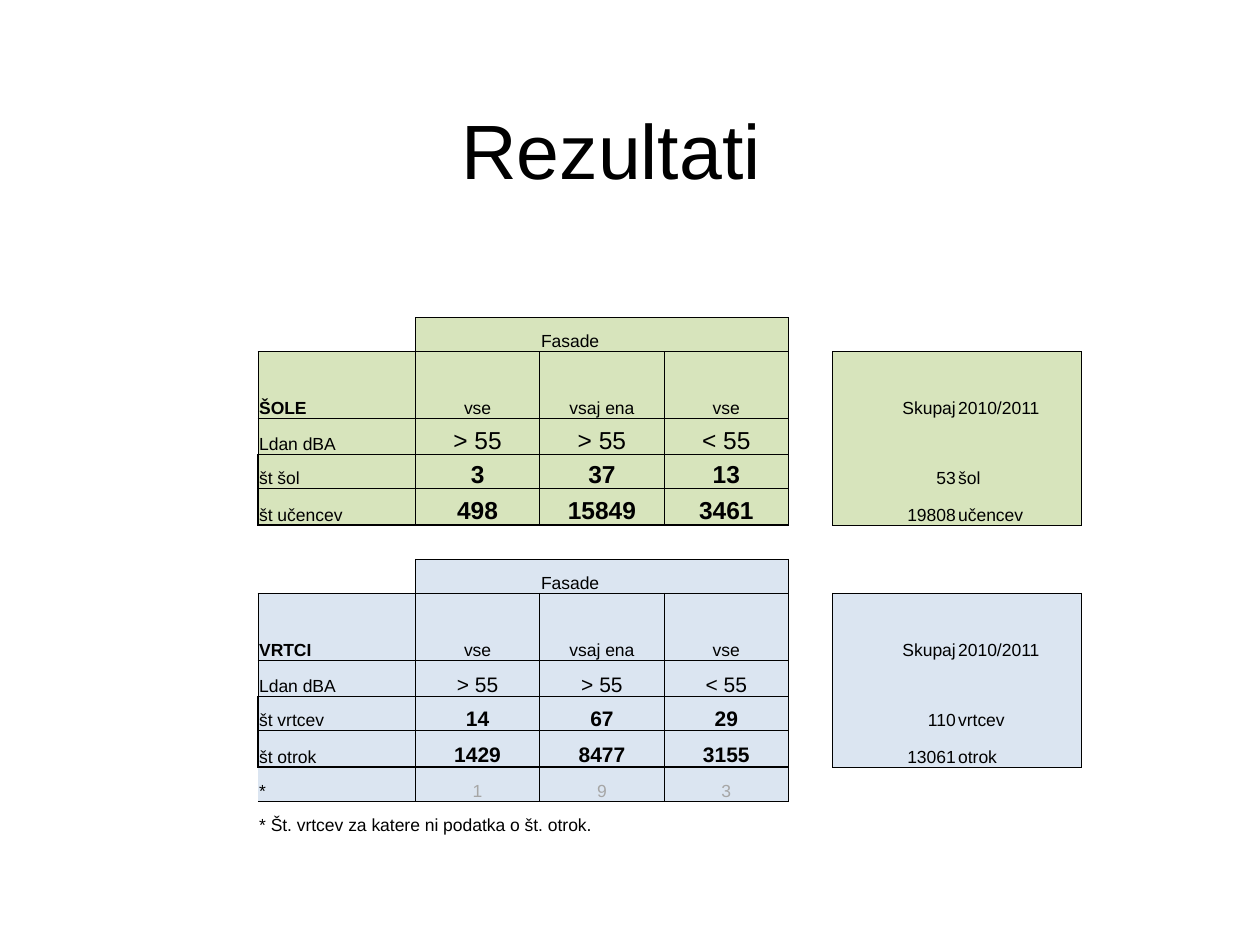
import pptx
import pptx.dml.color
import pptx.enum.text
import pptx.oxml.ns
import pptx.util
from lxml import etree

Inches = pptx.util.Inches
Pt = pptx.util.Pt
qn = pptx.oxml.ns.qn
ALIGN = pptx.enum.text.PP_ALIGN
ANCHOR = pptx.enum.text.MSO_ANCHOR

COLORS = {"text": "000000", "muted": "A6A6A6", "schools": "D7E4BC", "kindergartens": "DBE5F1"}
FONT = "Arial"
BASE_SIZE = 10
THIN, THICK = 0.5, 1
SIDES = ("lnL", "lnR", "lnT", "lnB")
LABEL, FIRST, LAST, TOTAL, UNIT = 1, 2, 4, 6, 7
HEADINGS = ("vse", "vsaj ena", "vse")
LEVELS = ("> 55", "> 55", "< 55")


def rgb(name):
    return pptx.dml.color.RGBColor.from_string(COLORS[name])


def write(paragraph, text, align=ALIGN.LEFT, size=BASE_SIZE, bold=False, color="text"):
    paragraph.alignment = align
    run = paragraph.add_run()
    run.text = text
    for name, value in {"name": FONT, "size": Pt(size), "bold": bold}.items():
        setattr(run.font, name, value)
    run.font.color.rgb = rgb(color)


def write_cell(table, row, column, text, **style):
    write(table.cell(row, column).text_frame.paragraphs[0], text, **style)


def write_values(table, row, label, values, **style):
    """Fill a label cell and the three centred cells beside it."""
    write_cell(table, row, LABEL, label)
    for column, value in enumerate(values, FIRST):
        write_cell(table, row, column, value, align=ALIGN.CENTER, **style)


def shade(table, rows, columns, color):
    for row in rows:
        for column in columns:
            fill = table.cell(row, column).fill
            fill.solid()
            fill.fore_color.rgb = rgb(color)


def outline(edges, top, left, bottom, right, width=THIN):
    """Record a frame around a cell range, on both sides of each shared edge."""
    for row in range(top, bottom + 1):
        edges[row, left, "lnL"] = edges[row, left - 1, "lnR"] = width
        edges[row, right, "lnR"] = edges[row, right + 1, "lnL"] = width
    for column in range(left, right + 1):
        edges[top, column, "lnT"] = edges[top - 1, column, "lnB"] = width
        edges[bottom, column, "lnB"] = edges[bottom + 1, column, "lnT"] = width


def outline_grid(edges, rows):
    for row in rows:
        for column in range(LABEL, LAST + 1):
            outline(edges, row, column, row, column)


def draw_borders(table, edges):
    for row in range(len(table.rows)):
        for column in range(len(table.columns)):
            properties = table.cell(row, column)._tc.get_or_add_tcPr()
            for position, side in enumerate(SIDES):
                width = edges.get((row, column, side))
                line = etree.Element(qn("a:" + side))
                if width:
                    line.set("w", str(Pt(width)))
                    solid = etree.SubElement(line, qn("a:solidFill"))
                    etree.SubElement(solid, qn("a:srgbClr"), val=COLORS["text"])
                else:
                    etree.SubElement(line, qn("a:noFill"))
                properties.insert(position, line)


def add_block(table, edges, top, name, counts, total_rows, size, color):
    """Place one group: facade header, level grid, framed counts and totals box."""
    heading, levels, first_count = top + 1, top + 2, top + 3
    bottom = top + 4
    shade(table, [top], range(FIRST, LAST + 1), color)
    shade(table, range(heading, bottom + 1), range(LABEL, LAST + 1), color)
    shade(table, range(heading, bottom + 1), (TOTAL, UNIT), color)

    write_cell(table, top, FIRST + 1, "Fasade")
    write_cell(table, heading, LABEL, name, bold=True)
    for column, text in enumerate(HEADINGS, FIRST):
        write_cell(table, heading, column, text, align=ALIGN.CENTER)
    write_values(table, levels, "Ldan dBA", LEVELS, size=size)
    for row, (label, *values) in enumerate(counts, first_count):
        write_values(table, row, label, values, size=size, bold=True)

    totals = {heading: ("Skupaj", "2010/2011"), **dict(enumerate(total_rows, first_count))}
    for row, (total, unit) in totals.items():
        write_cell(table, row, TOTAL, total, align=ALIGN.RIGHT)
        write_cell(table, row, UNIT, unit)

    outline(edges, top, FIRST, top, LAST)
    outline_grid(edges, range(heading, bottom + 1))
    outline(edges, first_count, LABEL, bottom, LAST, THICK)
    outline(edges, heading, TOTAL, bottom, UNIT)


def add_missing_data(table, edges, row):
    """Place the row of facilities without data and its footnote."""
    shade(table, [row], range(LABEL, LAST + 1), "kindergartens")
    write_values(table, row, "*", ("1", "9", "3"), color="muted")
    for column in range(LABEL, LAST + 1):
        for side in ("lnL", "lnR", "lnB"):
            edges[row, column, side] = THIN
        edges[row + 1, column, "lnT"] = THIN
    edges[row, LAST + 1, "lnL"] = THIN
    table.cell(row + 1, LABEL).merge(table.cell(row + 1, LAST))
    write_cell(table, row + 1, LABEL, "* Št. vrtcev za katere ni podatka o št. otrok.")


def add_empty_table(slide, left, top, width, height):
    label_width, gap_width = Inches(1.25), Inches(0.35)
    regular_width = (width - label_width - gap_width) // 7
    block_heights = [0.27, 0.53, 0.29, 0.27, 0.29]
    row_heights = [0.27, *block_heights, 0.27, *block_heights, 0.27, 0.27, 0.27]
    frame = slide.shapes.add_table(len(row_heights), 9, left, top, width, height)
    table = frame.table
    table.first_row = table.horz_banding = False
    for index, column in enumerate(table.columns):
        column.width = {1: label_width, 5: gap_width}.get(index, regular_width)
    for row, row_height in zip(table.rows, row_heights):
        row.height = Inches(row_height)
    cell_format = {
        "margin_left": Inches(0.01), "margin_right": Inches(0.01),
        "margin_top": Inches(0.01), "margin_bottom": 0,
        "vertical_anchor": ANCHOR.BOTTOM,
    }
    for cell in table.iter_cells():
        for name, value in cell_format.items():
            setattr(cell, name, value)
        cell.fill.background()
        paragraph = cell.text_frame.paragraphs[0]
        etree.SubElement(paragraph._p, qn("a:endParaRPr"), sz=str(BASE_SIZE * 100))
    return table


def add_results(slide, left, top, width, height):
    table = add_empty_table(slide, left, top, width, height)
    edges = {}
    add_block(table, edges, 1, "ŠOLE",
              [("št šol", "3", "37", "13"), ("št učencev", "498", "15849", "3461")],
              [("53", "šol"), ("19808", "učencev")], 14, "schools")
    add_block(table, edges, 7, "VRTCI",
              [("št vrtcev", "14", "67", "29"), ("št otrok", "1429", "8477", "3155")],
              [("110", "vrtcev"), ("13061", "otrok")], 12, "kindergartens")
    add_missing_data(table, edges, 12)
    draw_borders(table, edges)


def add_title(slide, left, top, width, height):
    frame = slide.shapes.add_textbox(left, top, width, height).text_frame
    frame.word_wrap = True
    frame.vertical_anchor = ANCHOR.TOP
    frame.margin_top = Inches(0.13)
    write(frame.paragraphs[0], "Rezultati", align=ALIGN.CENTER, size=44)


def main():
    presentation = pptx.Presentation()
    presentation.slide_width, presentation.slide_height = Inches(10), Inches(7.5)
    slide = presentation.slides.add_slide(presentation.slide_layouts[6])
    add_title(slide, Inches(0.35), Inches(0.68), Inches(9), Inches(1.25))
    add_results(slide, Inches(1.06), Inches(2.25), Inches(8.51), Inches(4.64))
    presentation.save("out.pptx")


if __name__ == "__main__":
    main()
